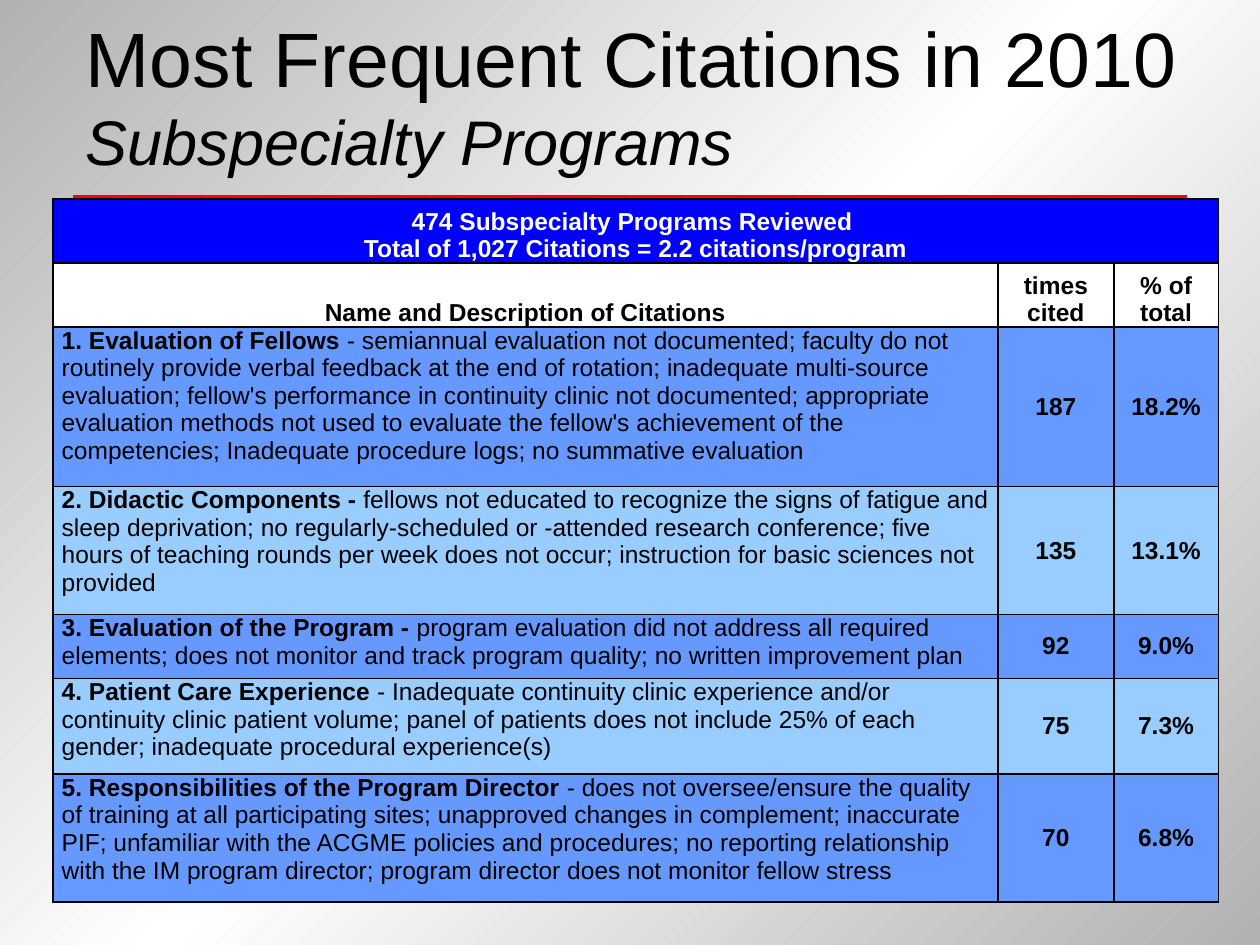
from copy import deepcopy

from pptx import Presentation
from pptx.dml.color import RGBColor
from pptx.enum.shapes import MSO_CONNECTOR
from pptx.enum.text import MSO_ANCHOR, MSO_AUTO_SIZE, PP_ALIGN
from pptx.oxml.ns import qn
from pptx.util import Inches, Pt
from lxml import etree

LEFT, CENTER = PP_ALIGN.LEFT, PP_ALIGN.CENTER
TOP, MIDDLE, BOTTOM = MSO_ANCHOR.TOP, MSO_ANCHOR.MIDDLE, MSO_ANCHOR.BOTTOM

COLORS = {
    "black": "000000", "white": "FFFFFF", "gray": "B2B2B2", "red": "FF0000",
    "banner": "0000FF", "odd": "6699FF", "even": "99CCFF",
}
TITLE = ("Most Frequent Citations in 2010", "Subspecialty Programs")
BANNER = ("474 Subspecialty Programs Reviewed ",
          "Total of 1,027 Citations = 2.2 citations/program")
HEADINGS = ("Name and Description of Citations", "times cited", "% of total")
# Name, description, times cited, share of total, row height in text lines
CITATIONS = [
    ("1. Evaluation of Fellows ",
     "- semiannual evaluation not documented; faculty do not routinely provide verbal "
     "feedback at the end of rotation; inadequate multi-source evaluation; fellow's "
     "performance in continuity clinic not documented; appropriate evaluation methods "
     "not used to evaluate the fellow's achievement of the competencies; Inadequate "
     "procedure logs; no summative evaluation", "187", "18.2%", 5),
    ("2. Didactic Components - ",
     "fellows not educated to recognize the signs of fatigue and sleep deprivation; no "
     "regularly-scheduled or -attended research conference; five hours of teaching "
     "rounds per week does not occur; instruction for basic sciences not provided",
     "135", "13.1%", 4),
    ("3. Evaluation of the Program -",
     " program evaluation did not address all required elements; does not monitor and "
     "track program quality; no written improvement plan", "92", "9.0%", 2),
    ("4. Patient Care Experience ",
     "- Inadequate continuity clinic experience and/or continuity clinic patient volume; "
     "panel of patients does not include 25% of each gender; inadequate procedural "
     "experience(s)", "75", "7.3%", 3),
    ("5. Responsibilities of the Program Director ",
     "- does not oversee/ensure the quality of training at all participating sites; "
     "unapproved changes in complement; inaccurate PIF; unfamiliar with the ACGME "
     "policies and procedures; no reporting relationship with the IM program director; "
     "program director does not monitor fellow stress", "70", "6.8%", 4),
]
COLUMN_WIDTHS = (7.5, 0.92, 0.83)
ROW_LINES = [2, 2] + [citation[-1] for citation in CITATIONS]
TABLE_LEFT, TABLE_TOP, TABLE_HEIGHT = 0.42, 1.58, 5.58
MARGIN = 0.58


def rgb(name):
    return RGBColor.from_string(COLORS[name])


def add_run(paragraph, text, size=14, bold=False, italic=False, color="black"):
    run = paragraph.add_run()
    run.text = text
    formats = {"name": "Arial", "size": Pt(size), "bold": bold, "italic": italic}
    for attribute, value in formats.items():
        setattr(run.font, attribute, value)
    run.font.color.rgb = rgb(color)
    return run


def add_break(paragraph, run):
    """Add a line break with the text format of the run before it."""
    paragraph.add_line_break()
    paragraph._p[-1].append(deepcopy(run._r.rPr))


def add_borders(cell):
    properties = cell._tc.get_or_add_tcPr()
    for index, side in enumerate(("lnL", "lnR", "lnT", "lnB")):
        line = etree.Element(qn(f"a:{side}"), w=str(Pt(1)))
        fill = etree.SubElement(line, qn("a:solidFill"))
        etree.SubElement(fill, qn("a:srgbClr"), val=COLORS["black"])
        properties.insert(index, line)


def prepare_cell(cell, fill, anchor, alignment):
    """Format the cell and return its paragraph."""
    formats = {"margin_left": Inches(0.07), "margin_right": Inches(0.07),
               "margin_top": 0, "margin_bottom": 0, "vertical_anchor": anchor}
    for attribute, value in formats.items():
        setattr(cell, attribute, value)
    cell.fill.solid()
    cell.fill.fore_color.rgb = rgb(fill)
    paragraph = cell.text_frame.paragraphs[0]
    paragraph.alignment = alignment
    return paragraph


def paint_background(slide):
    fill = slide.background.fill
    fill.gradient()
    fill.gradient_angle = 315
    stops = slide.element.find(".//" + qn("a:gsLst"))
    stops.append(deepcopy(stops[-1]))
    for stop, position, color in zip(fill.gradient_stops, (0, 0.5, 1),
                                     ("gray", "white", "gray")):
        stop.position = position
        stop.color.rgb = rgb(color)


def add_rule(slide):
    y = Inches(TABLE_TOP)
    rule = slide.shapes.add_connector(
        MSO_CONNECTOR.STRAIGHT, Inches(MARGIN), y, Inches(10 - MARGIN), y)
    rule.line.color.rgb = rgb("red")
    rule.line.width = Pt(5)
    etree.SubElement(rule._element.spPr, qn("a:effectLst"))


def add_title(slide):
    title = slide.shapes.title
    title.left, title.top = Inches(MARGIN), 0
    title.width, title.height = Inches(9), Inches(1.5)
    frame = title.text_frame
    frame.auto_size = MSO_AUTO_SIZE.NONE
    frame.vertical_anchor = MIDDLE
    paragraph = frame.paragraphs[0]
    paragraph.alignment = LEFT
    add_break(paragraph, add_run(paragraph, TITLE[0], size=44))
    add_run(paragraph, TITLE[1], size=36, italic=True)


def add_citation_table(slide):
    table = slide.shapes.add_table(
        len(ROW_LINES), len(COLUMN_WIDTHS), Inches(TABLE_LEFT), Inches(TABLE_TOP),
        Inches(sum(COLUMN_WIDTHS)), Inches(TABLE_HEIGHT)).table
    for column, width in zip(table.columns, COLUMN_WIDTHS):
        column.width = Inches(width)
    for row, lines in zip(table.rows, ROW_LINES):
        row.height = Inches(TABLE_HEIGHT * lines / sum(ROW_LINES))

    table.cell(0, 0).merge(table.cell(0, 2))
    paragraph = prepare_cell(table.cell(0, 0), "banner", BOTTOM, CENTER)
    add_break(paragraph, add_run(paragraph, BANNER[0], bold=True, color="white"))
    add_run(paragraph, BANNER[1], bold=True, color="white")

    for column, heading in enumerate(HEADINGS):
        paragraph = prepare_cell(table.cell(1, column), "white", BOTTOM, CENTER)
        add_run(paragraph, heading, bold=True)

    for index, (name, description, *values, _) in enumerate(CITATIONS):
        row, fill = index + 2, ("odd", "even")[index % 2]
        paragraph = prepare_cell(table.cell(row, 0), fill, TOP, LEFT)
        add_run(paragraph, name, bold=True)
        add_run(paragraph, description)
        for column, value in enumerate(values, start=1):
            paragraph = prepare_cell(table.cell(row, column), fill, MIDDLE, CENTER)
            add_run(paragraph, value, bold=True)

    for cell in table.iter_cells():
        add_borders(cell)


def main():
    presentation = Presentation()
    presentation.slide_width, presentation.slide_height = Inches(10), Inches(7.5)
    slide = presentation.slides.add_slide(presentation.slide_layouts[5])
    paint_background(slide)
    add_rule(slide)
    add_title(slide)
    add_citation_table(slide)
    presentation.save("out.pptx")


if __name__ == "__main__":
    main()
